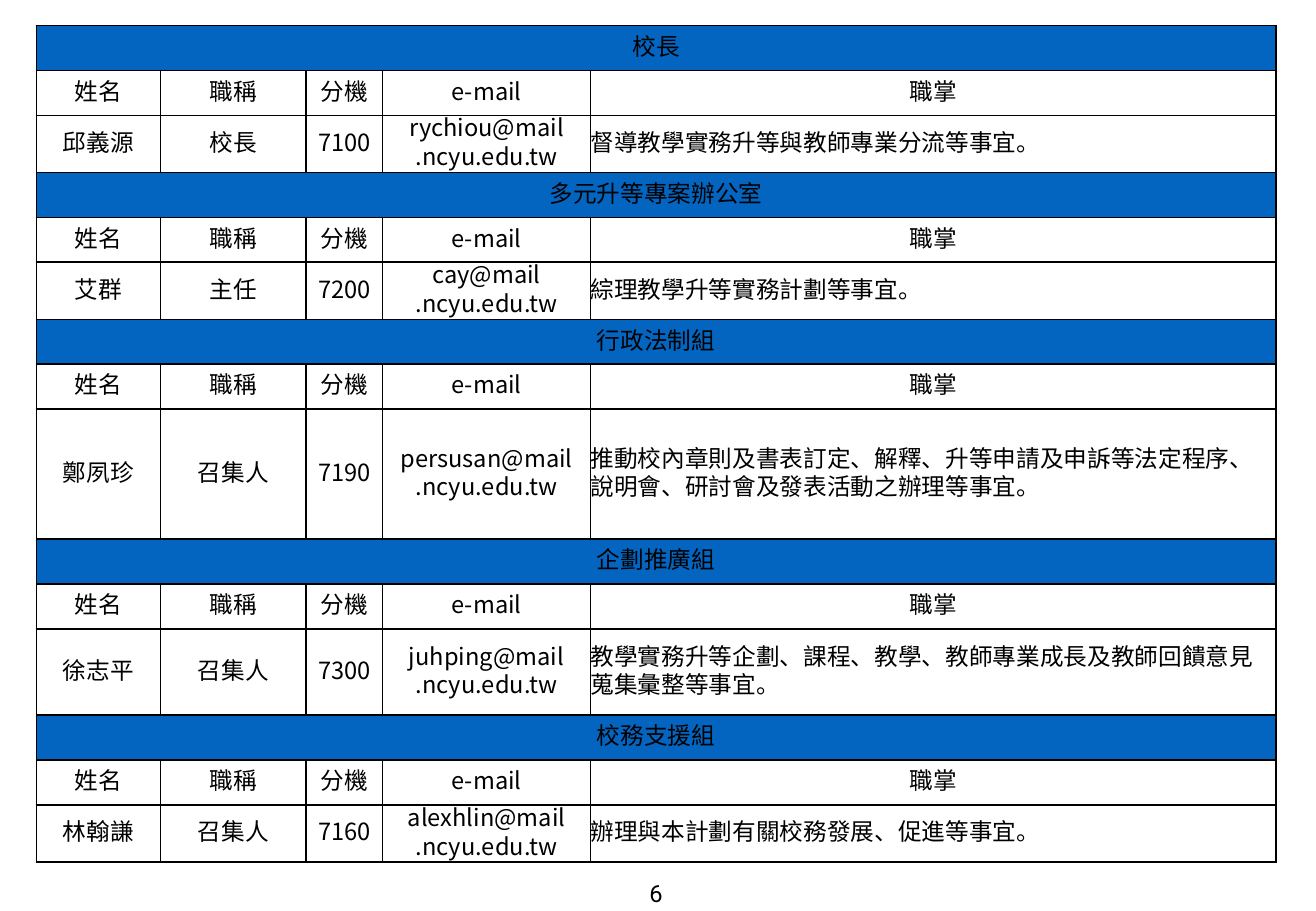
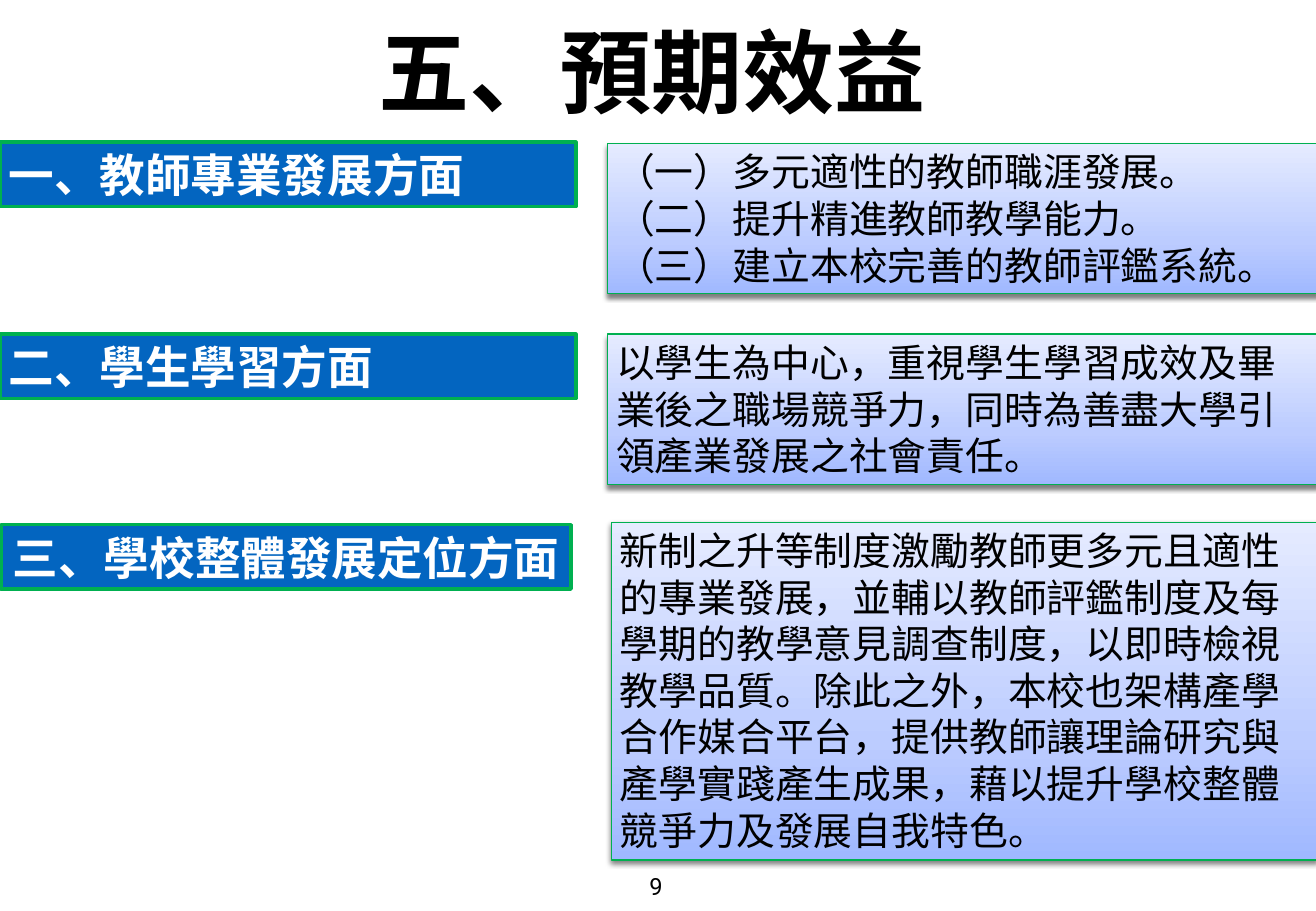
"""Build the staff contact table and the expected-benefits slide."""
from dataclasses import dataclass

from lxml.etree import SubElement
from pptx import Presentation
from pptx.dml.color import RGBColor
from pptx.enum.shapes import MSO_SHAPE
from pptx.enum.text import MSO_ANCHOR as Anchor, MSO_AUTO_SIZE as AutoSize, PP_ALIGN as Align
from pptx.oxml.ns import qn
from pptx.shapes.autoshape import Shape
from pptx.slide import Slide
from pptx.table import _Cell as Cell
from pptx.text.text import TextFrame
from pptx.util import Inches, Pt

WIDTH, HEIGHT = Inches(10.83), Inches(7.5)
BLUE, GREEN, BLACK, WHITE = "0365C0", "00B050", "000000", "FFFFFF"
PANEL_STOPS = ((0, "A0B8FF"), (35, "BCCCFF"), (100, "E5EBFF"))
CJK, LATIN = "Noto Sans CJK SC", "Roboto"
PANEL_INSETS = (0.07, 0.04)
COLUMN_SHARES = (9.42, 11.08, 5.82, 15.79, 52.08)
COLUMN_TITLES = ("姓名", "職稱", "分機", "e-mail", "職掌")
ROW_SHARE = 4.93
MAIL_HOST = ".ncyu.edu.tw"


@dataclass(frozen=True)
class TextStyle:
    size: float
    color: str = BLACK
    bold: bool = False
    align: Align = Align.LEFT
    font: str = CJK
    spacing: float | None = None


@dataclass(frozen=True)
class Area:
    """Place and size in percent of the slide."""
    left: float
    top: float
    width: float
    height: float

    def emu(self) -> tuple[int, int, int, int]:
        return (across(self.left), down(self.top), across(self.width), down(self.height))


@dataclass(frozen=True)
class Contact:
    office: str
    name: str
    post: str
    extension: str
    account: str
    duty: str
    height: float = 6.27


@dataclass(frozen=True)
class Benefit:
    heading: str
    heading_area: Area
    detail: str
    detail_area: Area
    heading_wraps: bool = True


TITLE = TextStyle(54, bold=True, align=Align.CENTER)
PAGE_NUMBER = TextStyle(14, align=Align.CENTER, font=LATIN)
CENTERED_CELL = TextStyle(14, align=Align.CENTER, spacing=16.8)
DUTY_CELL = TextStyle(14, spacing=16.8)
HEADING = TextStyle(27, WHITE, bold=True)
CENTERED_HEADING = TextStyle(27, WHITE, bold=True, align=Align.CENTER)
DETAIL = TextStyle(23)

CONTACTS = (
    Contact("校長", "邱義源", "校長", "7100", "rychiou@mail",
            "督導教學實務升等與教師專業分流等事宜。"),
    Contact("多元升等專案辦公室", "艾群", "主任", "7200", "cay@mail",
            "綜理教學升等實務計劃等事宜。"),
    Contact("行政法制組", "鄭夙珍", "召集人", "7190", "persusan@mail",
            "推動校內章則及書表訂定、解釋、升等申請及申訴等法定程序、"
            "說明會、研討會及發表活動之辦理等事宜。", 14.27),
    Contact("企劃推廣組", "徐志平", "召集人", "7300", "juhping@mail",
            "教學實務升等企劃、課程、教學、教師專業成長及教師回饋意見蒐集彙整等事宜。", 9.47),
    Contact("校務支援組", "林翰謙", "召集人", "7160", "alexhlin@mail",
            "辦理與本計劃有關校務發展、促進等事宜。"),
)

BENEFITS = (
    Benefit("一、教師專業發展方面", Area(0, 15.6, 43.77, 7.07),
            "（一）多元適性的教師職涯發展。\n（二）提升精進教師教學能力。\n"
            "（三）建立本校完善的教師評鑑系統。", Area(46.17, 15.73, 53.92, 16.53)),
    Benefit("二、學生學習方面", Area(0, 36.67, 43.77, 7.07),
            "以學生為中心，重視學生學習成效及畢業後之職場競爭力，"
            "同時為善盡大學引領產業發展之社會責任。", Area(46.17, 36.67, 53.92, 16.53)),
    Benefit("三、學校整體發展定位方面", Area(0.09, 57.6, 43.31, 7.07),
            "新制之升等制度激勵教師更多元且適性的專業發展，並輔以教師評鑑制度及每學期的"
            "教學意見調查制度，以即時檢視教學品質。除此之外，本校也架構產學合作媒合平台，"
            "提供教師讓理論研究與產學實踐產生成果，藉以提升學校整體競爭力及發展自我特色。",
            Area(46.45, 57.33, 53.65, 37.07), heading_wraps=False),
)


def across(share: float) -> int:
    return round(WIDTH * share / 100)


def down(share: float) -> int:
    return round(HEIGHT * share / 100)


def rgb(code: str) -> RGBColor:
    return RGBColor.from_string(code)


def write(frame: TextFrame, text: str, style: TextStyle) -> None:
    frame.text = text
    for paragraph in frame.paragraphs:
        paragraph.alignment = style.align
        if style.spacing:
            paragraph.line_spacing = Pt(style.spacing)
        font = paragraph.font
        font.size, font.bold, font.name = Pt(style.size), style.bold, style.font
        font.color.rgb = rgb(style.color)
        defaults = paragraph._p.pPr.find(qn("a:defRPr"))
        SubElement(defaults, qn("a:ea"), typeface=style.font)


def lay_out(frame: TextFrame, insets: tuple[float, float], anchor: Anchor,
            grows: bool = True, wraps: bool = True) -> None:
    frame.margin_left = frame.margin_right = Inches(insets[0])
    frame.margin_top = frame.margin_bottom = Inches(insets[1])
    frame.vertical_anchor = anchor
    frame.word_wrap = wraps
    frame.auto_size = AutoSize.SHAPE_TO_FIT_TEXT if grows else AutoSize.NONE


def add_label(slide: Slide, area: Area, text: str, style: TextStyle, inset: float,
              anchor: Anchor, grows: bool) -> None:
    frame = slide.shapes.add_textbox(*area.emu()).text_frame
    lay_out(frame, (inset, inset), anchor, grows)
    write(frame, text, style)


def add_page_number(slide: Slide, number: int, top: float) -> None:
    add_label(slide, Area(44.41, top, 10.9, 4.67), str(number), PAGE_NUMBER, 0.06,
              Anchor.MIDDLE, True)


def add_panel(slide: Slide, area: Area, text: str, style: TextStyle, line_width: float,
              wraps: bool = True) -> Shape:
    panel = slide.shapes.add_shape(MSO_SHAPE.RECTANGLE, *area.emu())
    panel.fill.solid()
    panel.fill.fore_color.rgb = rgb(BLUE)
    panel.line.color.rgb = rgb(GREEN)
    panel.line.width = Pt(line_width)
    panel.shadow.inherit = False
    lay_out(panel.text_frame, PANEL_INSETS, Anchor.TOP, wraps=wraps)
    write(panel.text_frame, text, style)
    return panel


def shade(panel: Shape) -> None:
    """Give a panel the upward gradient and a soft shadow below."""
    properties = panel._element.spPr
    panel.fill.gradient()
    gradient = properties.find(qn("a:gradFill"))
    for child in list(gradient):
        gradient.remove(child)
    stops = SubElement(gradient, qn("a:gsLst"))
    for position, code in PANEL_STOPS:
        stop = SubElement(stops, qn("a:gs"), pos=str(position * 1000))
        SubElement(stop, qn("a:srgbClr"), val=code)
    SubElement(gradient, qn("a:lin"), ang="16200000", scaled="0")
    shadow = SubElement(properties.find(qn("a:effectLst")), qn("a:outerShdw"),
                        blurRad=str(Pt(3)), dist=str(Pt(2)), dir="5400000", rotWithShape="0")
    tint = SubElement(shadow, qn("a:srgbClr"), val=BLACK)
    SubElement(tint, qn("a:alpha"), val="50000")


def style_cell(cell: Cell, fill: str | None) -> None:
    properties = cell._tc.get_or_add_tcPr()
    for side in ("lnL", "lnR", "lnT", "lnB"):
        border = SubElement(properties, qn(f"a:{side}"), w=str(Pt(1)))
        SubElement(SubElement(border, qn("a:solidFill")), qn("a:srgbClr"), val=BLACK)
    if fill:
        cell.fill.solid()
        cell.fill.fore_color.rgb = rgb(fill)
    else:
        cell.fill.background()
    cell.margin_left = cell.margin_right = cell.margin_top = cell.margin_bottom = 0
    cell.vertical_anchor = Anchor.MIDDLE


def build_contacts(slide: Slide) -> None:
    rows = []
    for contact in CONTACTS:
        person = (contact.name, contact.post, contact.extension,
                  f"{contact.account}\n{MAIL_HOST}", contact.duty)
        rows += [((contact.office,), ROW_SHARE), (COLUMN_TITLES, ROW_SHARE),
                 (person, contact.height)]
    area = Area(2.77, 2.8, sum(COLUMN_SHARES), sum(height for _, height in rows))
    table = slide.shapes.add_table(len(rows), len(COLUMN_SHARES), *area.emu()).table
    table.first_row = table.horz_banding = False
    for column, share in zip(table.columns, COLUMN_SHARES):
        column.width = across(share)
    for index, (texts, height) in enumerate(rows):
        table.rows[index].height = down(height)
        is_office = len(texts) == 1
        cells = list(table.rows[index].cells)
        for cell in cells:
            style_cell(cell, BLUE if is_office else None)
        if is_office:
            cells[0].merge(cells[-1])
        for cell, text in zip(cells, texts):
            is_duty = cell is cells[-1] and texts is not COLUMN_TITLES
            write(cell.text_frame, text, DUTY_CELL if is_duty else CENTERED_CELL)
    add_page_number(slide, 6, 95.73)


def build_benefits(slide: Slide) -> None:
    for benefit in BENEFITS:
        add_panel(slide, benefit.heading_area, benefit.heading,
                  HEADING if benefit.heading_wraps else CENTERED_HEADING, 2,
                  benefit.heading_wraps)
        shade(add_panel(slide, benefit.detail_area, benefit.detail, DETAIL, 0.75))
    add_label(slide, Area(6.83, 2.27, 85.41, 11.47), "五、預期效益", TITLE, 0,
              Anchor.BOTTOM, False)
    add_page_number(slide, 9, 94.93)


def main() -> None:
    deck = Presentation()
    deck.slide_width, deck.slide_height = WIDTH, HEIGHT
    for build in (build_contacts, build_benefits):
        build(deck.slides.add_slide(deck.slide_layouts[6]))
    deck.save("out.pptx")


if __name__ == "__main__":
    main()
